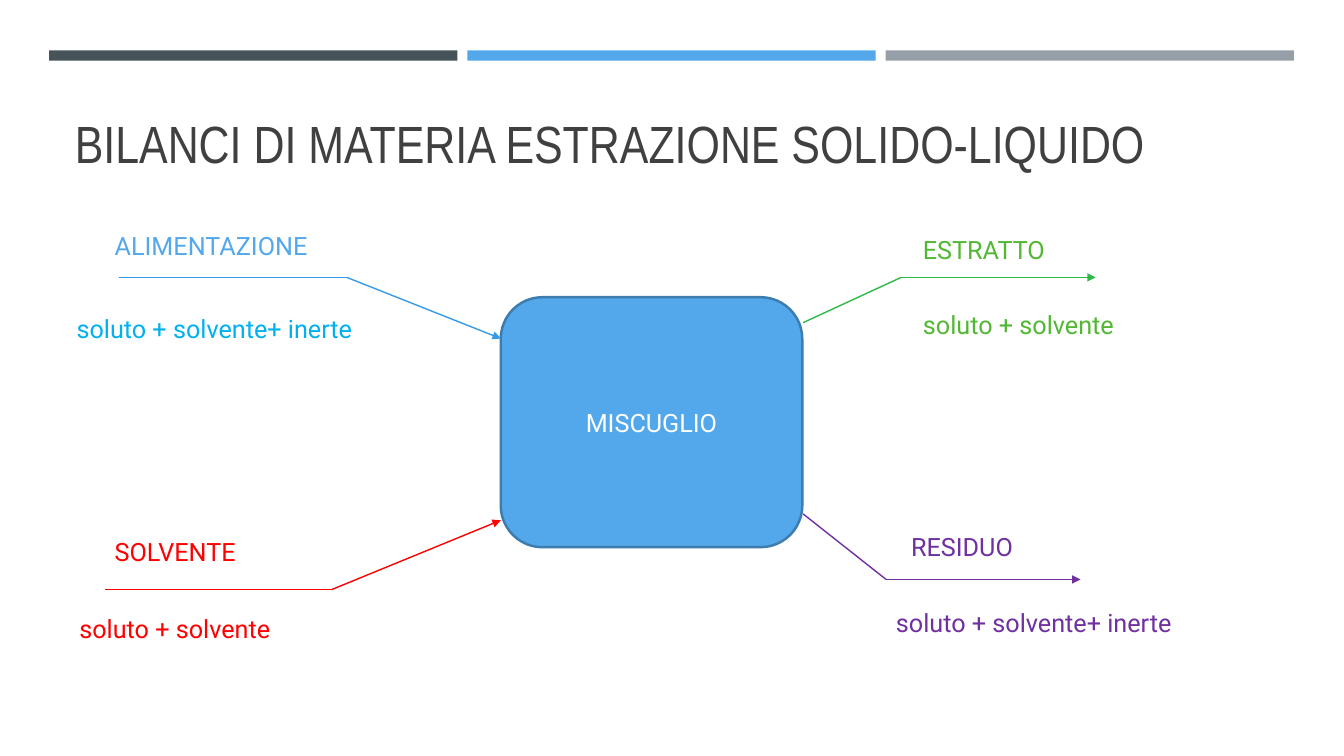
from itertools import pairwise

from pptx import Presentation
from pptx.dml.color import RGBColor
from pptx.enum import shapes, text
from pptx.oxml.ns import qn
from pptx.util import Cm, Pt

SLATE = RGBColor(0x46, 0x53, 0x59)
BLUE = RGBColor(0x53, 0xA8, 0xEB)
GREY = RGBColor(0x96, 0x9F, 0xA7)
CHARCOAL = RGBColor(0x40, 0x40, 0x40)
WHITE = RGBColor(0xFF, 0xFF, 0xFF)
BOX_EDGE = RGBColor(0x3D, 0x7C, 0xAE)
FEED_LINE = RGBColor(0x37, 0x9A, 0xE8)
CYAN = RGBColor(0x00, 0xB0, 0xF0)
RED = RGBColor(0xFF, 0x00, 0x00)
EXTRACT_LINE = RGBColor(0x2E, 0xB9, 0x49)
GREEN = RGBColor(0x52, 0xB8, 0x34)
PURPLE = RGBColor(0x70, 0x30, 0xA0)

TITLE = "BILANCI DI MATERIA ESTRAZIONE SOLIDO-LIQUIDO"
MIXER = "MISCUGLIO"
BAR_COLOURS = [SLATE, BLUE, GREY]
BAR_LEFT, BAR_TOP, BAR_WIDTH, BAR_HEIGHT, BAR_GAP = 1.24, 1.27, 10.29, 0.26, 0.25
LABEL_HEIGHT = 1.02

# Each label: wording, left, top, width, colour
STREAMS = [
    {"line": FEED_LINE,
     "route": [(3, 6.99), (8.74, 6.99), (12.62, 8.53)],
     "labels": [("ALIMENTAZIONE", 2.64, 5.69, 5.94, BLUE),
                ("soluto + solvente+ inerte", 1.68, 7.77, 8, CYAN)]},
    {"line": RED,
     "route": [(2.64, 14.86), (8.35, 14.86), (12.62, 13.11)],
     "labels": [("SOLVENTE", 2.64, 13.39, 3.89, RED),
                ("soluto + solvente", 1.75, 15.34, 5.69, RED)]},
    {"line": EXTRACT_LINE,
     "route": [(20.24, 8.13), (22.71, 6.99), (27.61, 6.99)],
     "labels": [("ESTRATTO", 23.01, 5.77, 3.81, GREEN),
                ("soluto + solvente", 23.01, 7.67, 5.69, GREEN)]},
    {"line": PURPLE,
     "route": [(20.24, 12.95), (22.33, 14.6), (27.23, 14.6)],
     "labels": [("RESIDUO", 22.71, 13.26, 3.4, PURPLE),
                ("soluto + solvente+ inerte", 22.33, 15.19, 8, PURPLE)]},
]


def add_text(paragraph, wording, colour, size=18, font="Roboto"):
    run = paragraph.add_run()
    run.text = wording
    run.font.name = font
    run.font.size = Pt(size)
    run.font.color.rgb = colour


def add_block(slide, kind, left, top, width, height, fill):
    shape = slide.shapes.add_shape(kind, Cm(left), Cm(top), Cm(width), Cm(height))
    shape.shadow.inherit = False
    shape.fill.solid()
    shape.fill.fore_color.rgb = fill
    shape.line.fill.background()
    return shape


def add_segment(slide, start, end, colour, arrow):
    connector = slide.shapes.add_connector(
        shapes.MSO_CONNECTOR.STRAIGHT, *map(Cm, start + end))
    connector.line.color.rgb = colour
    connector.line.width = Pt(1)
    properties = connector._element.spPr
    if arrow:
        tail = properties.find(qn("a:ln")).makeelement(qn("a:tailEnd"), {"type": "triangle"})
        properties.find(qn("a:ln")).append(tail)
    properties.append(properties.makeelement(qn("a:effectLst"), {}))


def add_label(slide, wording, left, top, width, colour):
    box = slide.shapes.add_textbox(Cm(left), Cm(top), Cm(width), Cm(LABEL_HEIGHT))
    box.text_frame.word_wrap = True
    add_text(box.text_frame.paragraphs[0], wording, colour)


def add_title(slide):
    title = slide.shapes.title
    title.left, title.top, title.width, title.height = Cm(1.63), Cm(2.97), Cm(30.63), Cm(2.11)
    frame = title.text_frame
    frame.auto_size = text.MSO_AUTO_SIZE.NONE
    frame.vertical_anchor = text.MSO_ANCHOR.TOP
    paragraph = frame.paragraphs[0]
    paragraph.alignment = text.PP_ALIGN.LEFT
    paragraph.line_spacing = 0.8
    add_text(paragraph, TITLE, CHARCOAL, 37.4, "Arial Narrow")


def add_mixer(slide):
    mixer = add_block(slide, shapes.MSO_SHAPE.ROUNDED_RECTANGLE, 12.62, 7.49, 7.6, 6.3, BLUE)
    mixer.line.color.rgb = BOX_EDGE
    mixer.line.width = Pt(1.75)
    mixer.text_frame.vertical_anchor = text.MSO_ANCHOR.MIDDLE
    paragraph = mixer.text_frame.paragraphs[0]
    paragraph.alignment = text.PP_ALIGN.CENTER
    add_text(paragraph, MIXER, WHITE)


def main():
    presentation = Presentation()
    presentation.slide_width, presentation.slide_height = Cm(33.87), Cm(19.05)
    slide = presentation.slides.add_slide(presentation.slide_layouts[5])
    for index, colour in enumerate(BAR_COLOURS):
        left = BAR_LEFT + index * (BAR_WIDTH + BAR_GAP)
        add_block(slide, shapes.MSO_SHAPE.RECTANGLE, left, BAR_TOP, BAR_WIDTH, BAR_HEIGHT, colour)
    add_title(slide)
    add_mixer(slide)
    for stream in STREAMS:
        route = stream["route"]
        for start, end in pairwise(route):
            add_segment(slide, start, end, stream["line"], arrow=end == route[-1])
        for label in stream["labels"]:
            add_label(slide, *label)
    presentation.save("out.pptx")


if __name__ == "__main__":
    main()
